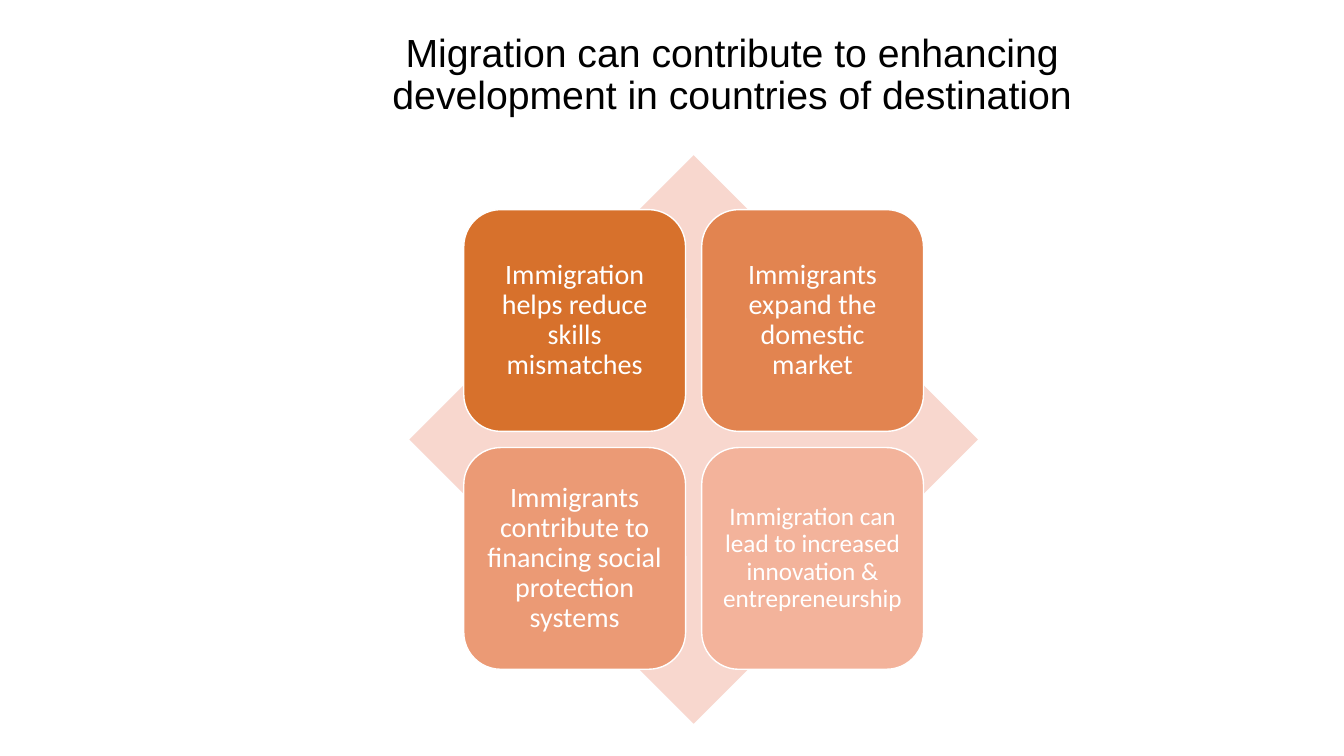
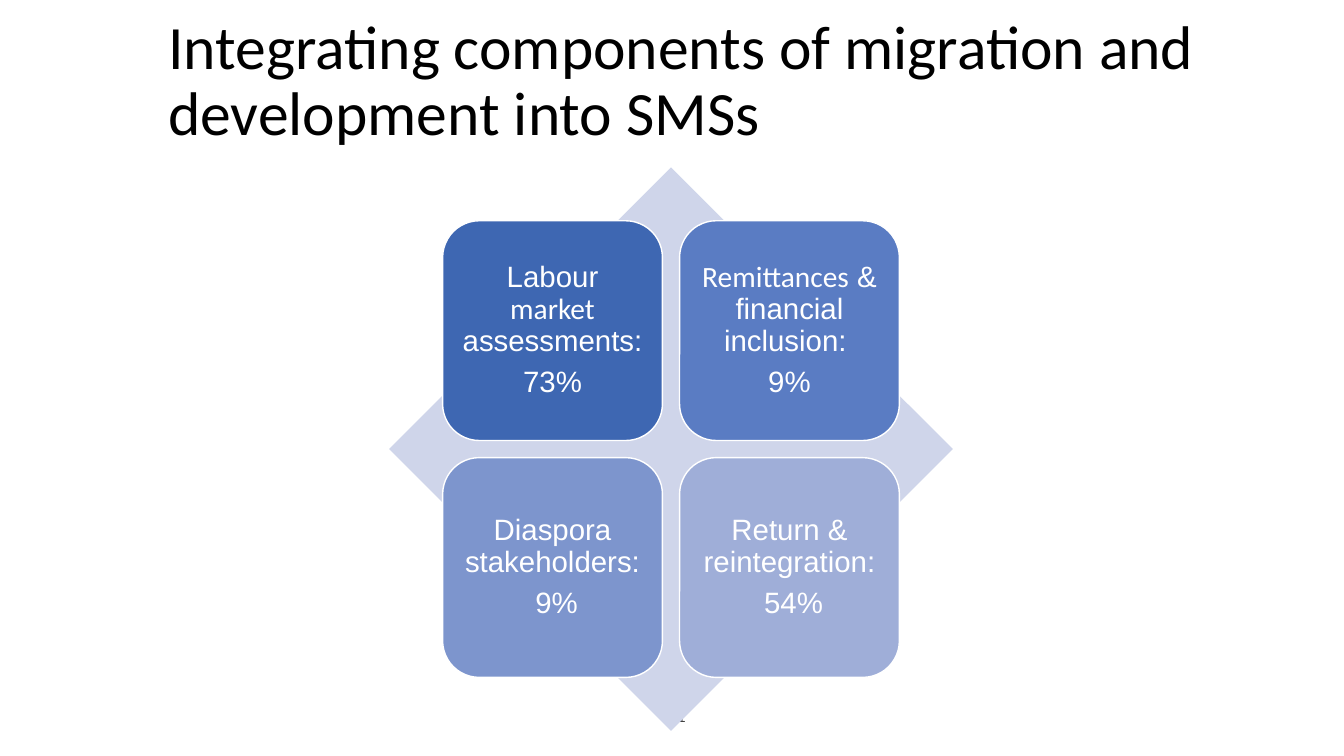
from pptx import Presentation
from pptx.dml.color import RGBColor
from pptx.enum.shapes import MSO_SHAPE
from pptx.enum.text import MSO_ANCHOR, PP_ALIGN
from pptx.util import Emu, Pt

PX = 9144  # EMU per px, 100 px to the inch
SANS, BODY = "Arial", "Calibri"
BLACK, WHITE, GREY = "000000", "FFFFFF", "404040"
CARD_SHARE, EDGE_SHARE = 0.39, 0.095  # parts of the diamond's width


def px(n):
    return Emu(round(n) * PX)


def rgb(color):
    return RGBColor.from_string(color)


def add_run(p, text, font, size, color):
    r = p.add_run()
    r.text = text
    r.font.name = font
    r.font.size = Pt(size)
    r.font.color.rgb = rgb(color)


def add_text(slide, box, text, font, size, color, align, wrap=True):
    tf = slide.shapes.add_textbox(*map(px, box)).text_frame
    tf.word_wrap = wrap
    p = tf.paragraphs[0]
    p.alignment = align
    add_run(p, text, font, size, color)
    return tf


def add_title(slide, box, text, font, size, align):
    tf = add_text(slide, box, text, font, size, BLACK, align)
    tf.vertical_anchor = MSO_ANCHOR.MIDDLE
    tf.paragraphs[0].line_spacing = 0.9


def add_block(slide, kind, left, top, side, fill):
    sp = slide.shapes.add_shape(kind, px(left), px(top), px(side), px(side))
    sp.shadow.inherit = False
    sp.fill.solid()
    sp.fill.fore_color.rgb = rgb(fill)
    sp.line.fill.background()
    return sp


def add_card(slide, left, top, side, fill, paragraphs, size, inset):
    sp = add_block(slide, MSO_SHAPE.ROUNDED_RECTANGLE, left, top, side, fill)
    sp.line.color.rgb = rgb(WHITE)
    sp.line.width = Pt(1)
    tf = sp.text_frame
    tf.word_wrap = True
    tf.vertical_anchor = MSO_ANCHOR.MIDDLE
    tf.margin_left = tf.margin_right = tf.margin_top = tf.margin_bottom = px(inset)
    for i, runs in enumerate(paragraphs):
        p = tf.add_paragraph() if i else tf.paragraphs[0]
        p.alignment = PP_ALIGN.CENTER
        p.line_spacing = 0.9
        p.space_before = Pt(7 if i else 0)
        for text, font in runs:
            add_run(p, text, font, size, WHITE)


def add_matrix(slide, left, top, side, fill, cards):
    """Diamond with a two by two grid of cards over it."""
    add_block(slide, MSO_SHAPE.DIAMOND, left, top, side, fill)
    card = side * CARD_SHARE
    near = side * EDGE_SHARE
    offsets = (near, side - near - card)
    for i, content in enumerate(cards):
        row, col = divmod(i, 2)
        add_card(slide, left + offsets[col], top + offsets[row], card, *content)


def add_destination_slide(prs):
    slide = prs.slides.add_slide(prs.slide_layouts[6])
    add_title(slide, (285, 19, 882, 112),
              "Migration can contribute to enhancing development in countries of destination",
              SANS, 28, PP_ALIGN.CENTER)
    benefits = [
        ("D7712C", "Immigration helps reduce skills mismatches", 20, 8),
        ("E28450", "Immigrants expand the domestic market", 20, 8),
        ("EB9A75", "Immigrants contribute to financing social protection systems", 20, 8),
        ("F3B39B", "Immigration can lead to increased innovation & entrepreneurship", 18, 7),
    ]
    add_matrix(slide, 406, 154, 564, "F8D7CE",
               [(fill, [[(text, BODY)]], size, inset)
                for fill, text, size, inset in benefits])


def add_components_slide(prs):
    slide = prs.slides.add_slide(prs.slide_layouts[6])
    add_title(slide, (157, 26, 1081, 112),
              "Integrating components of migration and development into SMSs",
              BODY, 44, PP_ALIGN.LEFT)
    add_text(slide, (640, 698, 50, 27), "21", SANS, 10, GREY, PP_ALIGN.RIGHT, wrap=False)
    components = [
        ("3E67B2", [("Labour", SANS), (" market", BODY), (" assessments: ", SANS)], "73%"),
        ("5A7CC3", [("Remittances", BODY), (" & financial inclusion: ", SANS)], "9%"),
        ("7D95CD", [("Diaspora stakeholders:", SANS)], " 9%"),
        ("9FAED8", [("Return & reintegration:", SANS)], " 54%"),
    ]
    add_matrix(slide, 386, 166, 559, "CFD5EA",
               [(fill, [label, [(share, SANS)]], 21, 9)
                for fill, label, share in components])


def main():
    prs = Presentation()
    prs.slide_width, prs.slide_height = px(1333), px(750)
    add_destination_slide(prs)
    add_components_slide(prs)
    prs.save("out.pptx")


if __name__ == "__main__":
    main()
